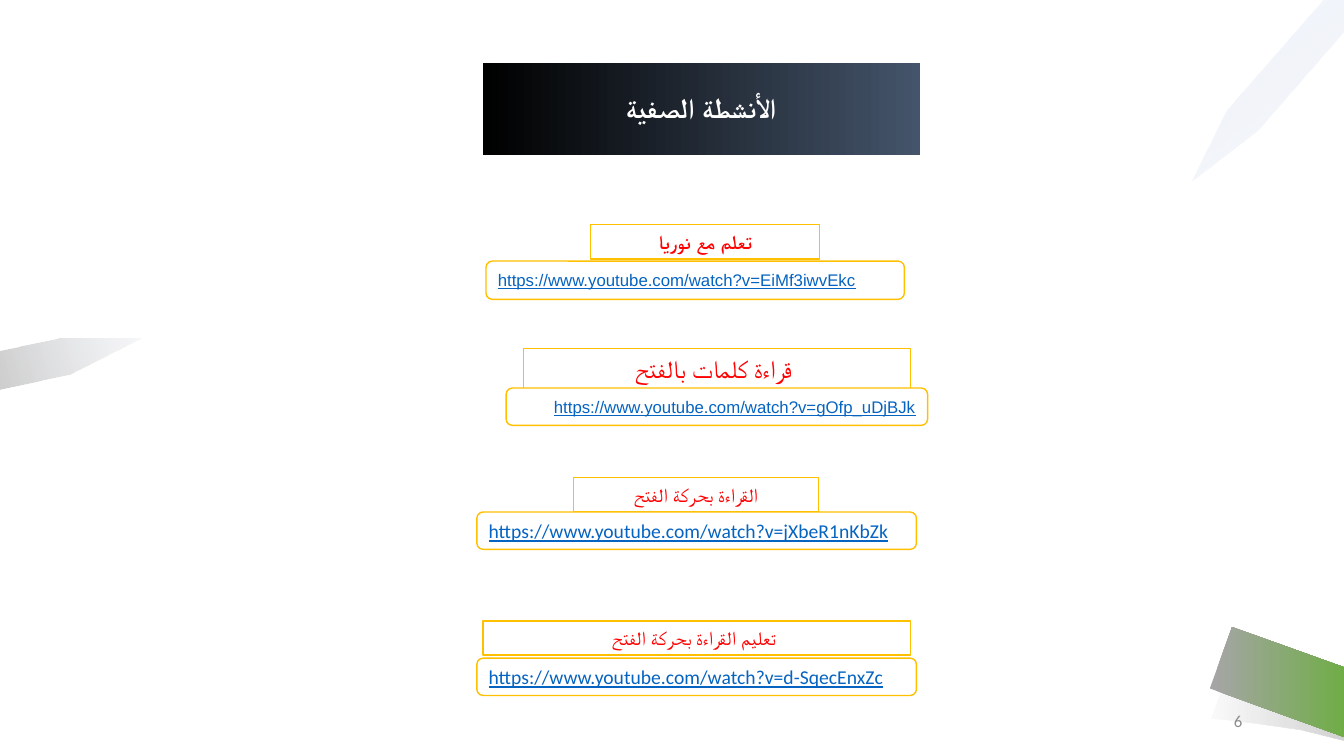
"""Build the classroom activities slide with its four video links."""
from lxml.etree import SubElement
from pptx import Presentation
from pptx.dml.color import RGBColor
from pptx.enum.shapes import MSO_SHAPE
from pptx.enum.text import MSO_ANCHOR, PP_ALIGN
from pptx.oxml.ns import qn
from pptx.util import Inches, Pt

WHITE = RGBColor(0xFF, 0xFF, 0xFF)
BLACK = RGBColor(0x00, 0x00, 0x00)
SLATE = RGBColor(0x44, 0x54, 0x6A)
GRAY = RGBColor(0xA5, 0xA5, 0xA5)
LIGHT_GRAY = RGBColor(0xE7, 0xE6, 0xE6)
NUMBER_GRAY = RGBColor(0x8C, 0x8C, 0x8C)
GREEN = RGBColor(0x70, 0xAD, 0x47)
BLUE = RGBColor(0x44, 0x72, 0xC4)
GOLD = RGBColor(0xFF, 0xC0, 0x00)
RED = RGBColor(0xFF, 0x00, 0x00)
LINK_BLUE = RGBColor(0x05, 0x63, 0xC1)


def fill_gradient(shape, stops, angle):
    """Fill with (position, colour, opacity) stops in percent, without outline."""
    shape.shadow.inherit = False
    shape.line.fill.background()
    shape.fill.gradient()
    shape.fill.gradient_angle = -angle % 360
    for stop, (position, color, opacity) in zip(shape.fill.gradient_stops, stops):
        stop.position = position / 100
        stop.color.rgb = color
    colors = shape._element.spPr.iter(qn("a:srgbClr"))
    for color_element, (position, color, opacity) in zip(colors, stops):
        if opacity < 100:
            SubElement(color_element, qn("a:alpha"), val=str(opacity * 1000))


def write_text(box, text, size, font, color, align, anchor=MSO_ANCHOR.MIDDLE):
    """Write one paragraph in a box and return it."""
    frame = box.text_frame
    frame.word_wrap = True
    frame.vertical_anchor = anchor
    para = frame.paragraphs[0]
    para.text = text
    para.alignment = align
    para.font.size = Pt(size)
    para.font.name = font
    para.font.color.rgb = color
    return para


deck = Presentation()
deck.slide_width = Inches(13.33)
deck.slide_height = Inches(7.5)
page = deck.slides.add_slide(deck.slide_layouts[6])
shapes = page.shapes

ribbons = [
    ([(12.02, 7.13), (12.15, 7.14), (12.47, 7.18), (12.89, 7.24), (13.33, 7.35),
      (13.33, 6.68), (12.9, 6.58), (12.56, 6.54), (12.24, 6.52)],
     [(3, GRAY, 6), (100, GRAY, 50)], 0),
    ([(13.33, 6.62), (12.22, 6.22), (12, 6.83), (13.33, 7.31)],
     [(3, GRAY, 100), (100, GREEN, 100)], 0),
    ([(1.4, 3.36), (0.58, 3.36), (0, 3.48), (0, 3.86), (0.7, 3.71)],
     [(0, SLATE, 5), (100, BLACK, 20)], 164),
    ([(13.12, 0), (12.17, 1.09), (11.82, 1.8), (12.47, 1.3), (13.33, 0.31), (13.33, 0)],
     [(0, BLUE, 5), (100, LIGHT_GRAY, 20)], 53),
]
for points, stops, angle in ribbons:
    corners = [(Inches(x), Inches(y)) for x, y in points]
    outline = shapes.build_freeform(*corners[0])
    outline.add_line_segments(corners[1:], close=True)
    fill_gradient(outline.convert_to_shape(), stops, angle)

title = shapes.add_shape(
    MSO_SHAPE.RECTANGLE, Inches(4.79), Inches(0.63), Inches(4.34), Inches(0.91))
fill_gradient(title, [(0, SLATE, 100), (100, BLACK, 100)], 180)
title.text_frame.margin_left = Inches(0.16)
para = write_text(title, "الأنشطة الصفية ", 20, "Calibri", WHITE, PP_ALIGN.CENTER)
para.font.bold = True
para.line_spacing = 0.9

number = shapes.add_textbox(Inches(9.42), Inches(6.95), Inches(3), Inches(0.4))
write_text(number, "6", 12, "Calibri", NUMBER_GRAY, PP_ALIGN.RIGHT)

activities = [
    ("تعلم مع نوريا", 14, "Arial", True, (5.86, 2.23, 2.27, 0.34),
     "https://www.youtube.com/watch?v=EiMf3iwvEkc", 12, "Arial", False,
     (4.82, 2.59, 4.15, 0.38)),
    ("قراءة كلمات بالفتح ", 18, "Calibri", False, (5.19, 3.46, 3.84, 0.4),
     "https://www.youtube.com/watch?v=gOfp_uDjBJk", 12, "Arial", True,
     (5.02, 3.85, 4.18, 0.37)),
    ("القراءة بحركة الفتح", 14, "Calibri", False, (5.69, 4.74, 2.43, 0.34),
     "https://www.youtube.com/watch?v=jXbeR1nKbZk", 14, "Calibri", False,
     (4.73, 5.08, 4.36, 0.37)),
    ("تعليم القراءة بحركة الفتح ", 14, "Calibri", False, (4.79, 6.16, 4.24, 0.34),
     "https://www.youtube.com/watch?v=d-SqecEnxZc", 14, "Calibri", False,
     (4.73, 6.53, 4.36, 0.37)),
]
for (name, name_size, name_font, bold, name_place,
     address, link_size, link_font, right_to_left, link_place) in activities:
    label = shapes.add_shape(MSO_SHAPE.RECTANGLE, *map(Inches, name_place))
    link = shapes.add_shape(MSO_SHAPE.ROUNDED_RECTANGLE, *map(Inches, link_place))
    for box in (label, link):
        box.shadow.inherit = False
        box.fill.solid()
        box.fill.fore_color.rgb = WHITE
        box.line.color.rgb = GOLD
        box.line.width = Pt(1)

    para = write_text(
        label, name, name_size, name_font, RED, PP_ALIGN.CENTER, MSO_ANCHOR.TOP)
    para.font.bold = bold

    align = PP_ALIGN.RIGHT if right_to_left else PP_ALIGN.LEFT
    para = write_text(link, address, link_size, link_font, LINK_BLUE, align)
    para.font.underline = True
    if right_to_left:
        para._p.get_or_add_pPr().set("rtl", "1")

deck.save("out.pptx")
